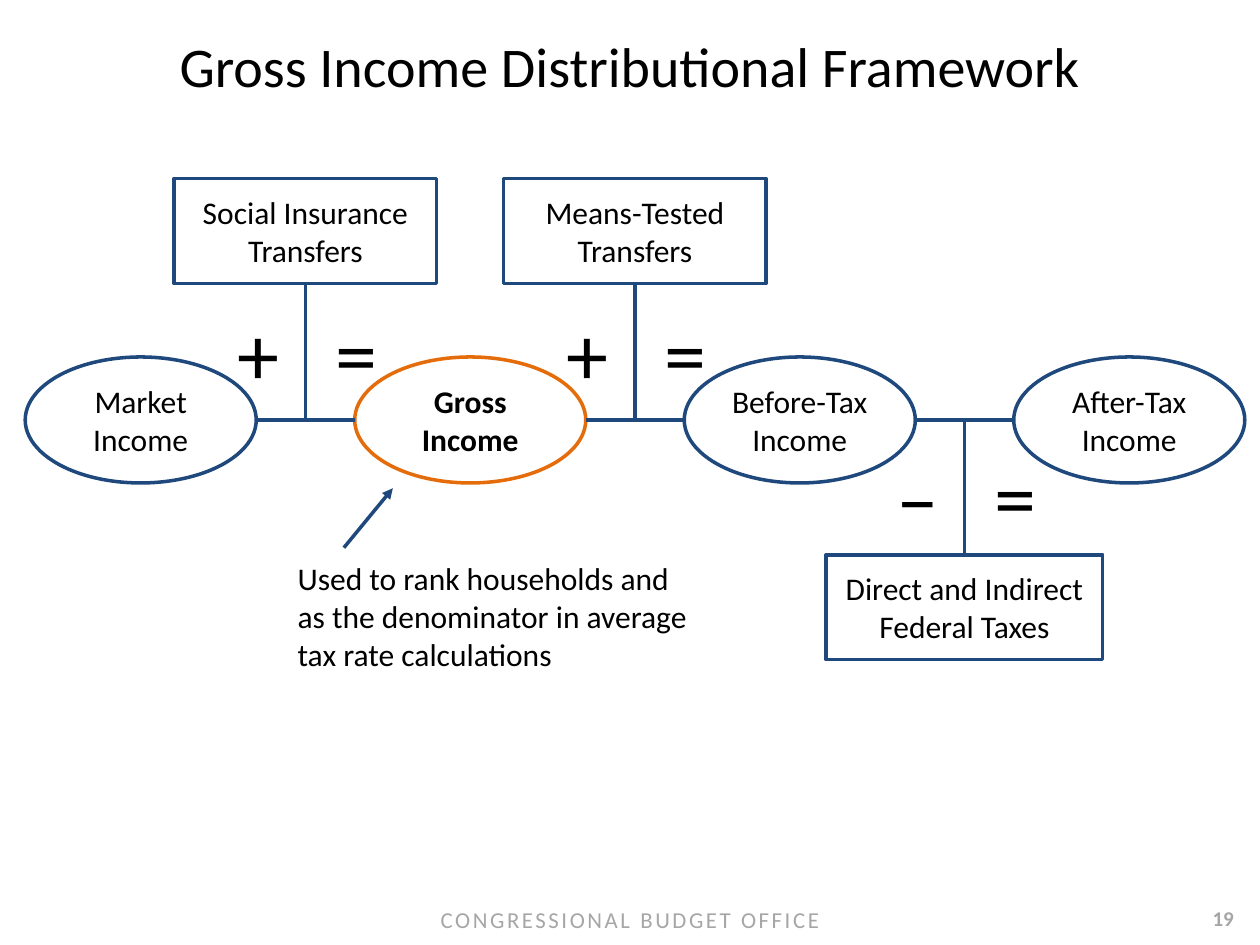
import pptx
import pptx.util
import pptx.dml.color
import pptx.enum.shapes
import pptx.enum.text
import pptx.oxml
import pptx.oxml.ns

Pt = pptx.util.Pt
RGB = pptx.dml.color.RGBColor
KIND = pptx.enum.shapes.MSO_SHAPE
ALIGN = pptx.enum.text.PP_ALIGN
ANCHOR = pptx.enum.text.MSO_ANCHOR

# Content
TITLE = "Gross Income Distributional Framework"
STAGES = [  # lines, stressed
    (["Market", "Income"], False),
    (["Gross", "Income"], True),
    (["Before-Tax", "Income"], False),
    (["After-Tax", "Income"], False),
]
STEPS = [  # lines, sign, box width, above the flow line
    (["Social Insurance", "Transfers"], "+", 150, True),
    (["Means-Tested", "Transfers"], "+", 150, True),
    (["Direct and Indirect", "Federal Taxes"], "‒", 158, False),
]
NOTE = ["Used to rank households and", "as the denominator in average",
        "tax rate calculations"]
FOOTER = "CONGRESSIONAL BUDGET OFFICE"
NUMBER = "19"

THEME = {
    "font": "Calibri", "text": "000000", "line": "1F497D",
    "stress": "E46C0A", "muted": "A6A6A6", "rule": 2,
    "title": 32, "label": 18, "sign": 48, "footer": 13, "number": 12,
}

# Layout in points
WIDE, HIGH = 720, 540
LEFT, PITCH = 14.4, 188.3
OVAL_W, OVAL_H = 132, 72
FLOW_Y = 240
BOX_H, BOX_UP, BOX_DOWN = 60, 102, 317
SIGN_W, SIGN_H, SIGN_UP, SIGN_DOWN = 39, 65, 169, 250.5
SIGN_X, EQUAL_X = -46, 10


def write(frame, lines, size, color="text", bold=False, align=ALIGN.CENTER):
    frame.text = "\n".join(lines)
    for para in frame.paragraphs:
        para.alignment = align
        font = para.font
        font.name, font.size, font.bold = THEME["font"], Pt(THEME[size]), bold
        font.color.rgb = RGB.from_string(THEME[color])


def add_text(slide, area, lines, size, wrap=False, **style):
    box = slide.shapes.add_textbox(*map(Pt, area))
    box.text_frame.word_wrap = wrap
    write(box.text_frame, lines, size, **style)
    return box.text_frame


def add_node(slide, kind, area, lines, color="line", bold=False):
    node = slide.shapes.add_shape(kind, *map(Pt, area))
    node.shadow.inherit = False
    node.fill.background()
    node.line.color.rgb = RGB.from_string(THEME[color])
    node.line.width = Pt(THEME["rule"])
    frame = node.text_frame
    frame.word_wrap = False
    frame.vertical_anchor = ANCHOR.MIDDLE
    write(frame, lines, "label", bold=bold)
    return node


def add_line(slide, start, end, arrow=False):
    line = slide.shapes.add_connector(
        pptx.enum.shapes.MSO_CONNECTOR.STRAIGHT, *map(Pt, start + end))
    line.line.color.rgb = RGB.from_string(THEME["line"])
    line.line.width = Pt(THEME["rule"])
    space = pptx.oxml.ns.nsdecls("a")
    if arrow:
        line.line._get_or_add_ln().append(
            pptx.oxml.parse_xml(f'<a:tailEnd {space} type="triangle"/>'))
    line._element.spPr.append(pptx.oxml.parse_xml(f"<a:effectLst {space}/>"))
    return line


def add_step(slide, index, lines, sign, width, above):
    """Link two stages and hang the amount added or taken on the link."""
    left = LEFT + index * PITCH + OVAL_W
    right = LEFT + (index + 1) * PITCH
    mid = (left + right) / 2
    top = BOX_UP if above else BOX_DOWN
    add_line(slide, (left, FLOW_Y), (right, FLOW_Y))
    box = add_node(slide, KIND.RECTANGLE,
                   (mid - width / 2, top, width, BOX_H), lines)
    edge = top + BOX_H if above else top
    stem = add_line(slide, (mid, edge), (mid, FLOW_Y))
    stem.begin_connect(box, 2 if above else 0)
    for mark, shift in ((sign, SIGN_X), ("=", EQUAL_X)):
        area = (mid + shift, SIGN_UP if above else SIGN_DOWN, SIGN_W, SIGN_H)
        add_text(slide, area, [mark], "sign", align=ALIGN.LEFT)


def main():
    deck = pptx.Presentation()
    deck.slide_width, deck.slide_height = Pt(WIDE), Pt(HIGH)
    slide = deck.slides.add_slide(deck.slide_layouts[5])

    title = slide.shapes.title
    title.left, title.top, title.width, title.height = map(
        Pt, (0, 14, WIDE, 46))
    write(title.text_frame, [TITLE], "title")

    for index, (lines, stress) in enumerate(STAGES):
        area = (LEFT + index * PITCH, FLOW_Y - OVAL_H / 2, OVAL_W, OVAL_H)
        add_node(slide, KIND.OVAL, area, lines,
                 "stress" if stress else "line", stress)
    for index, step in enumerate(STEPS):
        add_step(slide, index, *step)

    add_text(slide, (163, 316, 244, 73), NOTE, "label", align=ALIGN.LEFT)
    add_line(slide, (196.5, 313), (224.5, 279), arrow=True)

    foot = add_text(slide, (0, 510, WIDE, 27), [FOOTER], "footer",
                    wrap=True, color="muted")
    foot.vertical_anchor = ANCHOR.MIDDLE
    foot.margin_top = Pt(7.2)
    foot.paragraphs[0].runs[0].font._element.set("spc", "150")
    add_text(slide, (678, 514, 42, 22), [NUMBER], "number",
             wrap=True, color="muted", bold=True)
    deck.save("out.pptx")


if __name__ == "__main__":
    main()
